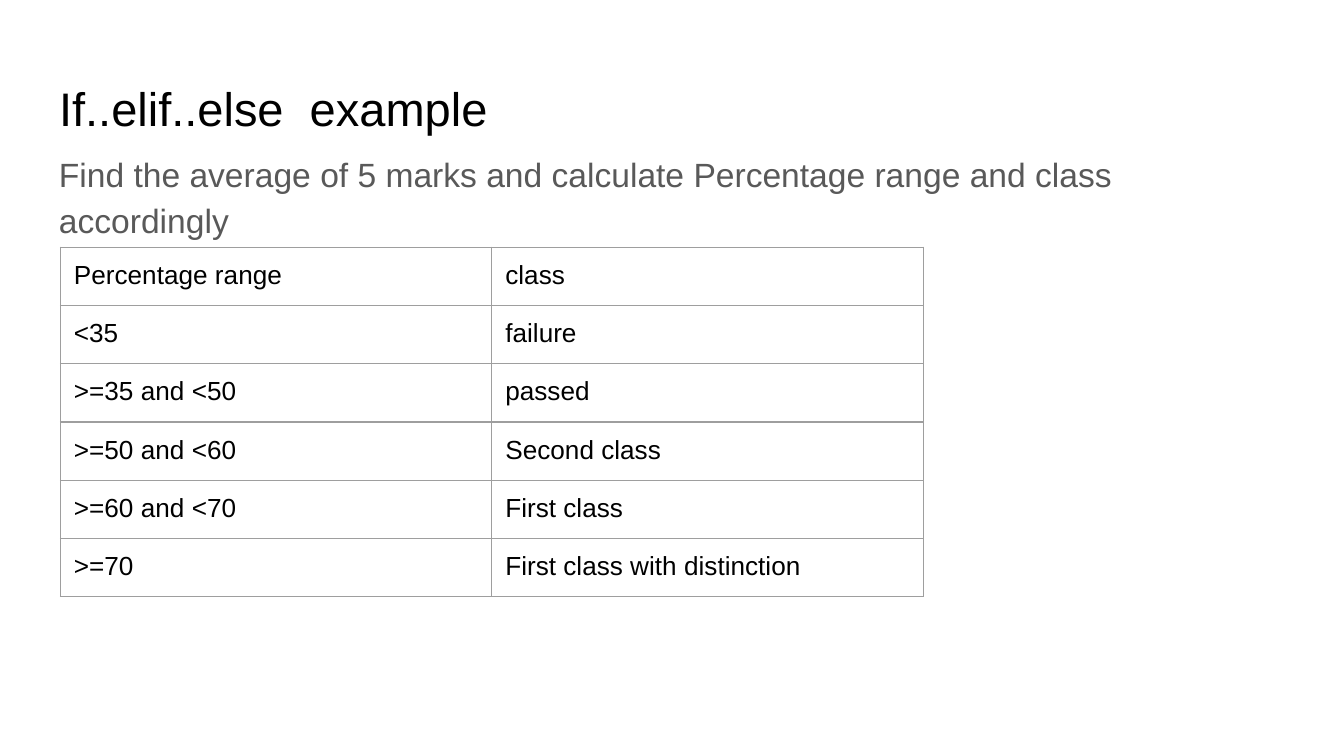
from lxml import etree
from pptx import Presentation
from pptx import util as u
from pptx.dml.color import RGBColor
from pptx.enum import text
from pptx.oxml import ns

BLACK = RGBColor(0x00, 0x00, 0x00)
GREY = RGBColor(0x59, 0x59, 0x59)
RULE = RGBColor(0x9E, 0x9E, 0x9E)
SLIDE_WIDTH = u.Inches(10)
SLIDE_HEIGHT = SLIDE_WIDTH * 9 // 16
INSET = u.Inches(0.1)
FRAME = {
    "margin_left": INSET,
    "margin_right": INSET,
    "margin_top": INSET,
    "margin_bottom": INSET,
    "word_wrap": True,
    "auto_size": text.MSO_AUTO_SIZE.NONE,
    "vertical_anchor": text.MSO_ANCHOR.TOP,
}
CELL = {name: INSET for name in FRAME if name.startswith("margin")}
CLASSES = [
    ("Percentage range", "class"),
    ("<35", "failure"),
    (">=35 and <50", "passed"),
    (">=50 and <60", "Second class"),
    (">=60 and <70", "First class"),
    (">=70", "First class with distinction"),
]


def set_values(target, values):
    for name, value in values.items():
        setattr(target, name, value)


def write(frame, words, size, color):
    paragraph = frame.paragraphs[0]
    paragraph.alignment = text.PP_ALIGN.LEFT
    run = paragraph.add_run()
    run.text = words
    set_values(run.font, {"name": "Arial", "size": u.Pt(size), "bold": False})
    run.font.color.rgb = color
    return paragraph


def draw_borders(cell):
    properties = cell._tc.get_or_add_tcPr()
    for position, side in enumerate(("lnL", "lnR", "lnT", "lnB")):
        line = etree.Element(ns.qn(f"a:{side}"), w=str(u.Pt(0.75)))
        fill = etree.SubElement(line, ns.qn("a:solidFill"))
        etree.SubElement(fill, ns.qn("a:srgbClr"), val=str(RULE))
        properties.insert(position, line)


def place_title(slide, left, top, width, height):
    heading = slide.shapes.title
    set_values(heading, {"left": left, "top": top, "width": width, "height": height})
    set_values(heading.text_frame, FRAME)
    write(heading.text_frame, "If..elif..else  example", 25.2, BLACK)


def place_task(slide, left, top, width, height):
    task = slide.shapes.add_textbox(left, top, width, height).text_frame
    set_values(task, FRAME)
    wording = "Find the average of 5 marks and calculate Percentage range and class accordingly"
    paragraph = write(task, wording, 18, GREY)
    set_values(paragraph, {"line_spacing": 1.15, "space_after": u.Pt(12)})


def place_classes(slide, left, top, width, height):
    rows, columns = len(CLASSES), len(CLASSES[0])
    grid = slide.shapes.add_table(rows, columns, left, top, width, height).table
    set_values(grid, {"first_row": False, "horz_banding": False})
    for row, entries in enumerate(CLASSES):
        for column, entry in enumerate(entries):
            cell = grid.cell(row, column)
            set_values(cell, CELL)
            cell.fill.background()
            draw_borders(cell)
            write(cell.text_frame, entry, 14, BLACK)


def main():
    deck = Presentation()
    set_values(deck, {"slide_width": SLIDE_WIDTH, "slide_height": SLIDE_HEIGHT})
    slide = deck.slides.add_slide(deck.slide_layouts[5])
    left, width = u.Inches(0.34), u.Inches(9.32)
    place_title(slide, left, u.Inches(0.49), width, u.Inches(0.63))
    place_task(slide, left, u.Inches(1), width, u.Inches(4))
    place_classes(slide, u.Inches(0.45), u.Inches(1.84), u.Inches(6.42), u.Inches(2.6))
    deck.save("out.pptx")


if __name__ == "__main__":
    main()
